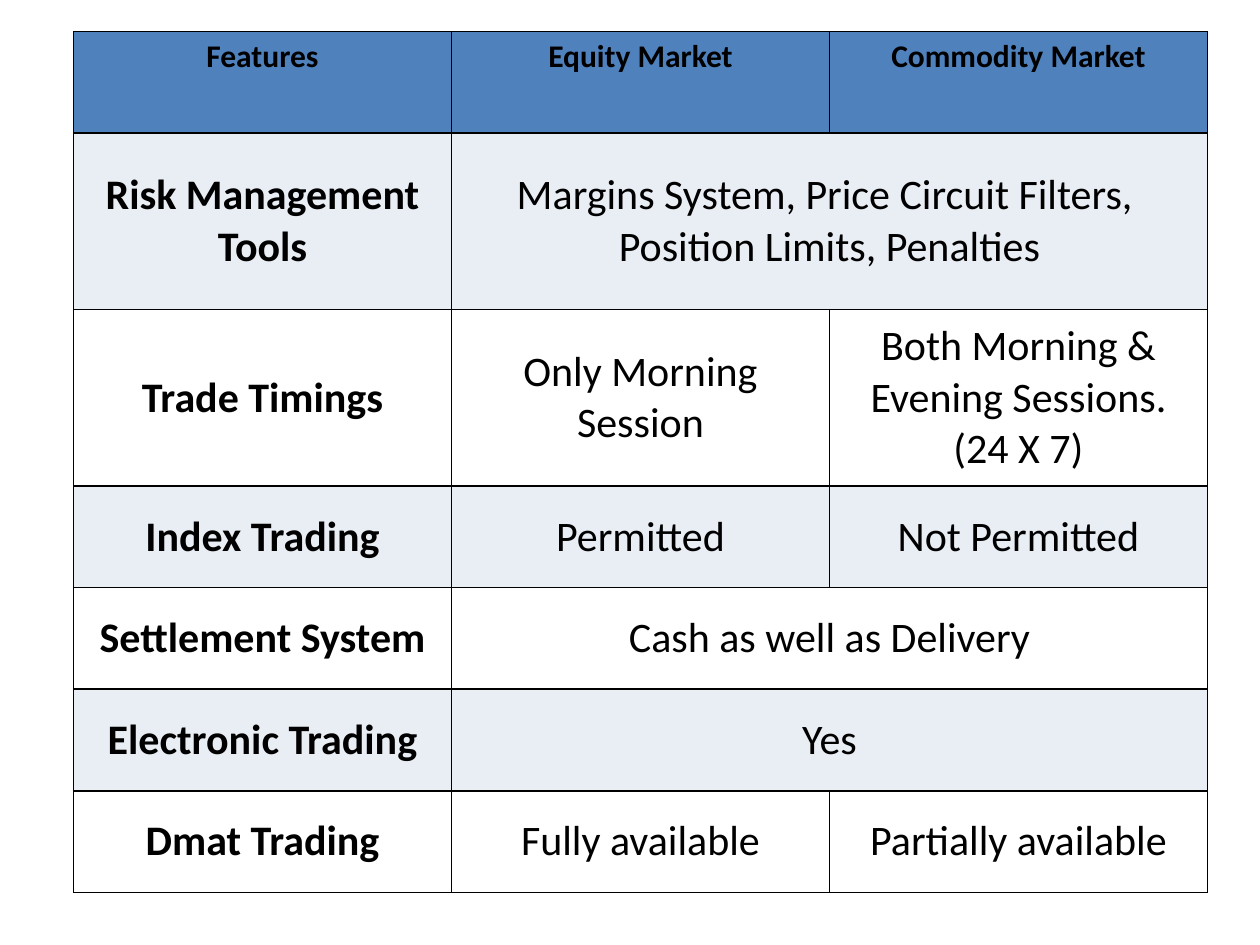
from dataclasses import dataclass
from lxml.etree import SubElement
from pptx import Presentation
from pptx.dml.color import RGBColor as RGB
from pptx.enum.text import MSO_ANCHOR as Anchor, PP_ALIGN as Align
from pptx.oxml.ns import qn
from pptx.util import Pt


@dataclass(frozen=True)
class Theme:
    font: str = "Calibri"
    ink: str = "000000"
    head: str = "4F81BD"
    band: str = "E9EDF4"
    plain: str = "FFFFFF"
    small: int = 18
    large: int = 24
    line: int = 1


THEME = Theme()
LEFT, TOP, WIDE = 42, 18, 216
LOW, HIGH = 58.1, 100.8
ROWS = [
    (LOW, ["Features", "Equity Market", "Commodity Market"]),
    (HIGH, ["Risk Management Tools",
            "Margins System, Price Circuit Filters, \nPosition Limits, Penalties"]),
    (HIGH, ["Trade Timings", "Only Morning Session",
            "Both Morning & Evening Sessions. (24 X 7)"]),
    (LOW, ["Index Trading", "Permitted", "Not Permitted"]),
    (LOW, ["Settlement System", "Cash as well as Delivery"]),
    (LOW, ["Electronic Trading", "Yes"]),
    (LOW, ["Dmat Trading", "Fully available", "Partially available"]),
]


def add_edges(cell):
    props = cell._tc.get_or_add_tcPr()
    for side in ("lnL", "lnR", "lnT", "lnB"):
        line = SubElement(props, qn(f"a:{side}"), w=str(Pt(THEME.line)))
        fill = SubElement(line, qn("a:solidFill"))
        SubElement(fill, qn("a:srgbClr"), val=THEME.ink)


def style_cell(cell, shade):
    add_edges(cell)
    cell.fill.solid()
    cell.fill.fore_color.rgb = RGB.from_string(shade)


def add_text(cell, text, size, bold):
    frame = cell.text_frame
    for i, part in enumerate(text.split("\n")):
        para = frame.add_paragraph() if i else frame.paragraphs[0]
        para.alignment = Align.CENTER
        run = para.add_run()
        run.text = part
        font = run.font
        font.name, font.size, font.bold = THEME.font, Pt(size), bold
        font.color.rgb = RGB.from_string(THEME.ink)


def fill_row(table, r, texts):
    head = r == 0
    shade = THEME.head if head else THEME.band if r % 2 else THEME.plain
    for c in range(3):
        style_cell(table.cell(r, c), shade)
    if len(texts) == 2:
        table.cell(r, 1).merge(table.cell(r, 2))
    for c, text in enumerate(texts):
        cell = table.cell(r, c)
        cell.vertical_anchor = Anchor.TOP if head else Anchor.MIDDLE
        add_text(cell, text, THEME.small if head else THEME.large, head or c == 0)


def add_grid(slide):
    tall = sum(high for high, _ in ROWS)
    table = slide.shapes.add_table(len(ROWS), 3, Pt(LEFT), Pt(TOP),
                                   Pt(3 * WIDE), Pt(tall)).table
    for col in table.columns:
        col.width = Pt(WIDE)
    for r, (high, texts) in enumerate(ROWS):
        table.rows[r].height = Pt(high)
        fill_row(table, r, texts)


def main():
    deck = Presentation()
    deck.slide_width, deck.slide_height = Pt(720), Pt(540)
    slide = deck.slides.add_slide(deck.slide_layouts[6])
    add_grid(slide)
    deck.save("out.pptx")


if __name__ == "__main__":
    main()
